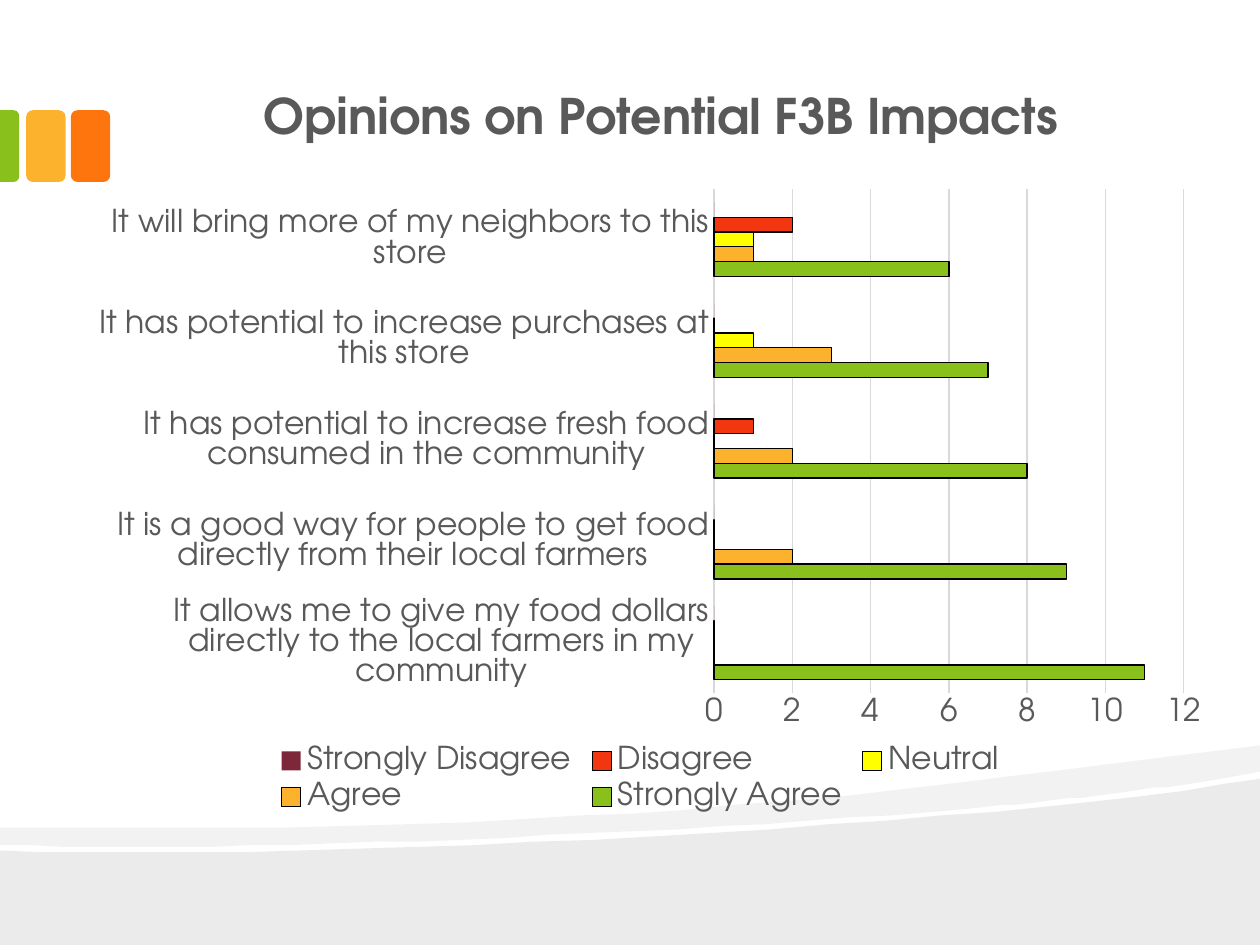
from lxml.etree import SubElement
from pptx import Presentation
from pptx.chart.data import CategoryChartData
from pptx.dml.color import RGBColor
from pptx.enum.chart import XL_CHART_TYPE, XL_LEGEND_POSITION, XL_TICK_MARK
from pptx.enum.shapes import MSO_SHAPE
from pptx.oxml import parse_xml
from pptx.oxml.ns import qn
from pptx.util import Pt

CHART_NS = "http://schemas.openxmlformats.org/drawingml/2006/chart"
GREEN, AMBER, ORANGE = "89C01C", "FCB22C", "FE750E"
GREY, GRID = "595959", "D9D9D9"

STATEMENTS = [
    "It allows me to give my food dollars directly to the local farmers in my community",
    "It is a good way for people to get food directly from their local farmers",
    "It has potential to increase fresh food consumed in the community",
    "It has potential to increase purchases at this store",
    "It will bring more of my neighbors to this store",
]
# Answer, number of people per statement, bar colour, outline
ANSWERS = [
    ("Strongly Agree", (11, 9, 8, 7, 6), GREEN, True),
    ("Agree", (0, 2, 2, 3, 1), AMBER, True),
    ("Neutral", (0, 0, 0, 1, 1), "FFFF00", True),
    ("Disagree", (0, 0, 1, 0, 2), "F23610", True),
    ("Strongly Disagree", (0, 0, 0, 0, 0), "7C283A", False),
]


def color(hex_code):
    return RGBColor.from_string(hex_code)


def format_font(font, size=18, bold=False, ink=GREY, name="TeX Gyre Adventor"):
    font.size, font.bold, font.name = Pt(size), bold, name
    font.color.rgb = color(ink)


def write(frame, text, **style):
    run = frame.paragraphs[0].add_run()
    run.text = text
    format_font(run.font, **style)


def curve(start, control1, control2, end, steps=24):
    """Points along a cubic curve, without its start."""
    points = []
    for step in range(1, steps + 1):
        t = step / steps
        weights = ((1 - t) ** 3, 3 * t * (1 - t) ** 2, 3 * t * t * (1 - t), t ** 3)
        points.append(tuple(
            sum(w * p[axis] for w, p in zip(weights, (start, control1, control2, end)))
            for axis in (0, 1)))
    return points


def set_layout(parent, index, target=None, **place):
    """Put a chart part at fractions of the chart's size."""
    for old in parent.findall(qn("c:layout")):
        parent.remove(old)
    inner = f'<c:layoutTarget val="{target}"/>' if target else ""
    modes = "".join(f'<c:{key}Mode val="edge"/>' for key in ("x", "y"))
    values = "".join(f'<c:{key} val="{value}"/>' for key, value in place.items())
    parent.insert(index, parse_xml(
        f'<c:layout xmlns:c="{CHART_NS}"><c:manualLayout>'
        f"{inner}{modes}{values}</c:manualLayout></c:layout>"))


class SlideBuilder:
    def __init__(self, slide):
        self.slide = slide

    def paint(self, shape, fill, alpha=None):
        shape.shadow.inherit = False
        shape.fill.solid()
        shape.fill.fore_color.rgb = color(fill)
        shape.line.fill.background()
        if alpha:
            tint = shape.fill._xPr.find(qn("a:solidFill"))[0]
            SubElement(tint, qn("a:alpha")).set("val", str(alpha * 1000))

    def ribbon(self, points, alpha):
        builder = self.slide.shapes.build_freeform(*points[0], scale=Pt(1))
        builder.add_line_segments(points[1:], close=True)
        self.paint(builder.convert_to_shape(), "000000", alpha)

    def block(self, kind, left, top, width, height, fill, rotation=0):
        shape = self.slide.shapes.add_shape(
            kind, Pt(left), Pt(top), Pt(width), Pt(height))
        shape.rotation = rotation
        self.paint(shape, fill)
        return shape

    def bar_chart(self, title, left, top, width, height):
        data = CategoryChartData()
        data.categories = STATEMENTS
        for answer, counts, _, _ in ANSWERS:
            data.add_series(answer, counts)
        chart = self.slide.shapes.add_chart(
            XL_CHART_TYPE.BAR_CLUSTERED,
            Pt(left), Pt(top), Pt(width), Pt(height), data).chart
        format_font(chart.font, size=10, ink="000000", name="TeX Gyre Pagella")

        # Heading
        write(chart.chart_title.text_frame, title, size=28, bold=True)
        set_layout(chart.chart_title._element, 1, x=0.16, y=-0.01)

        # Bars
        plot = chart.plots[0]
        plot.gap_width, plot.overlap, plot.vary_by_categories = 182, 0, False
        for series, (_, _, fill, outlined) in zip(plot.series, ANSWERS):
            series.format.fill.solid()
            series.format.fill.fore_color.rgb = color(fill)
            if outlined:
                self.rule(series.format.line, "000000")
            else:
                series.format.line.fill.background()
        set_layout(chart._chartSpace.chart.plotArea, 0, "inner",
                   x=0.565, y=0.143, w=0.414, h=0.686)

        # Axes
        statements, people = chart.category_axis, chart.value_axis
        for axis in (statements, people):
            axis.major_tick_mark = axis.minor_tick_mark = XL_TICK_MARK.NONE
            format_font(axis.tick_labels.font)
        self.rule(statements.format.line, GRID)
        people.minimum_scale, people.maximum_scale, people.major_unit = 0, 12, 2
        people.format.line.fill.background()
        self.rule(people.major_gridlines.format.line, GRID)

        # Legend
        chart.has_legend = True
        chart.legend.position = XL_LEGEND_POSITION.BOTTOM
        chart.legend.include_in_layout = False
        format_font(chart.legend.font)

    def rule(self, line, ink):
        line.color.rgb = color(ink)
        line.width = Pt(0.75)


def main():
    deck = Presentation()
    deck.slide_width, deck.slide_height = Pt(720), Pt(540)
    page = SlideBuilder(deck.slides.add_slide(deck.slide_layouts[6]))

    # Ribbons along the bottom
    page.ribbon([(720, 540), (0, 540), (0, 486)]
                + curve((0, 486), (190, 492), (563, 472), (720, 445)), alpha=8)
    page.ribbon([(720, 426), (720, 441)]
                + curve((720, 441), (678, 449), (621, 456), (556, 462))
                + curve((556, 462), (377, 477), (139, 487), (0, 483))
                + [(0, 473)]
                + curve((0, 473), (352, 477), (524, 451), (720, 426)), alpha=5)

    # Colour blocks at the left edge
    for left, fill in ((40.5, ORANGE), (15, AMBER)):
        page.block(MSO_SHAPE.ROUNDED_RECTANGLE, left, 63, 22.5, 41, fill)
    edge = page.block(MSO_SHAPE.ROUND_2_SAME_RECTANGLE, -15, 78, 41, 11, GREEN, 90)
    edge.adjustments[0] = 0.29

    # Survey answers
    page.bar_chart("Opinions on Potential F3B Impacts", 42, 48, 648, 420)

    deck.save("out.pptx")


if __name__ == "__main__":
    main()
